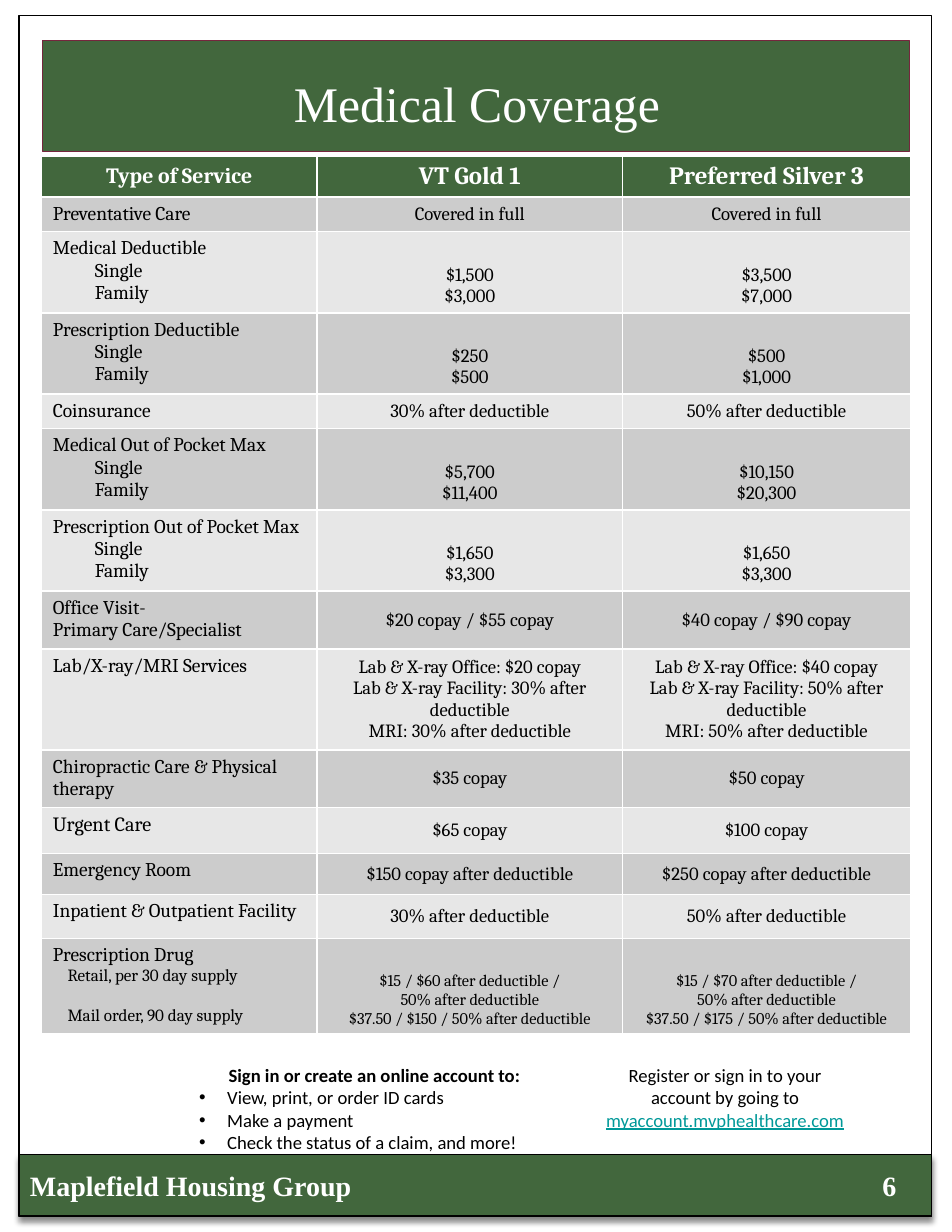
from lxml.etree import SubElement
from pptx import Presentation
from pptx.dml.color import RGBColor
from pptx.enum.shapes import MSO_SHAPE as SHAPE
from pptx.enum.text import MSO_ANCHOR as ANCHOR, PP_ALIGN as ALIGN
from pptx.oxml.ns import qn
from pptx.util import Pt

GREEN, WHITE, BLACK = "42673D", "FFFFFF", "000000"
BANDS = ("CCCCCC", "E7E7E7")
SERIF = "Times New Roman"

TITLE = "Medical Coverage"
COMPANY, PAGE = "Maplefield Housing Group", "6"
HEADERS = [("Type of Service", 14), ("VT Gold 1", 16), ("Preferred Silver 3", 16)]
COL_WIDTHS = [177, 196.5, 185]
HEADER_HEIGHT = 25
PERSONS = ["Single", "Family"]

# row height, service, indented lines, first plan, second plan
ROWS = [
    (22, ["Preventative Care"], [], ["Covered in full"], ["Covered in full"]),
    (52, ["Medical Deductible"], PERSONS, ["$1,500", "$3,000"], ["$3,500", "$7,000"]),
    (52, ["Prescription Deductible"], PERSONS, ["$250", "$500"], ["$500", "$1,000"]),
    (22, ["Coinsurance"], [], ["30% after deductible"], ["50% after deductible"]),
    (52, ["Medical Out of Pocket Max"], PERSONS, ["$5,700", "$11,400"], ["$10,150", "$20,300"]),
    (52, ["Prescription Out of Pocket Max"], PERSONS, ["$1,650", "$3,300"], ["$1,650", "$3,300"]),
    (37, ["Office Visit-", "Primary Care/Specialist"], [],
     ["$20 copay / $55 copay"], ["$40 copay / $90 copay"]),
    (64, ["Lab/X-ray/MRI Services"], [],
     ["Lab & X-ray Office: $20 copay", "Lab & X-ray Facility: 30% after deductible",
      "MRI: 30% after deductible"],
     ["Lab & X-ray Office: $40 copay", "Lab & X-ray Facility: 50% after deductible",
      "MRI: 50% after deductible"]),
    (37, ["Chiropractic Care & Physical therapy"], [], ["$35 copay"], ["$50 copay"]),
    (29.5, ["Urgent Care"], [], ["$65 copay"], ["$100 copay"]),
    (26.5, ["Emergency Room"], [],
     ["$150 copay after deductible"], ["$250 copay after deductible"]),
    (28, ["Inpatient & Outpatient Facility"], [],
     ["30% after deductible"], ["50% after deductible"]),
    (61.5, ["Prescription Drug"], ["Retail, per 30 day supply", "Mail order, 90 day supply"],
     ["$15 / $60 after deductible /", "50% after deductible",
      "$37.50 / $150 / 50% after deductible"],
     ["$15 / $70 after deductible /", "50% after deductible",
      "$37.50 / $175 / 50% after deductible"]),
]

ACCOUNT_HEADING = "Sign in or create an online account to:"
ACCOUNT_USES = ["View, print, or order ID cards", "Make a payment",
                "Check the status of a claim, and more!"]
REGISTER = ["Register or sign in to your", "account by going to "]
ADDRESS = "myaccount.mvphealthcare.com"


def rgb(color):
    return RGBColor.from_string(color)


def style(p, size, font, color=BLACK, bold=False, align=ALIGN.LEFT):
    p.alignment = align
    for r in p.runs:
        f = r.font
        f.size, f.name, f.bold = Pt(size), font, bold
        f.color.rgb = rgb(color)


def add_rect(s, box, fill, line, width):
    sp = s.shapes.add_shape(SHAPE.RECTANGLE, *map(Pt, box))
    sp.shadow.inherit = False
    if fill:
        sp.fill.solid()
        sp.fill.fore_color.rgb = rgb(fill)
    else:
        sp.fill.background()
    sp.line.color.rgb = rgb(line)
    sp.line.width = Pt(width)
    return sp


def drop_shadow(sp):
    effects = sp._element.spPr.find(qn("a:effectLst"))
    shadow = SubElement(effects, qn("a:outerShdw"), blurRad=str(Pt(4)),
                        dist=str(Pt(2.5)), dir="5400000", rotWithShape="0")
    color = SubElement(shadow, qn("a:srgbClr"), val=BLACK)
    SubElement(color, qn("a:alpha"), val="47000")


def add_text(s, box, lines):
    sp = s.shapes.add_textbox(*map(Pt, box))
    sp.text_frame.word_wrap = True
    sp.text_frame.text = "\n".join(lines)
    return sp.text_frame


def add_bullet(p):
    pPr = p._p.get_or_add_pPr()
    pPr.set("marL", str(Pt(18)))
    pPr.set("indent", str(-Pt(18)))
    SubElement(pPr, qn("a:buFont"), typeface="Arial")
    SubElement(pPr, qn("a:buChar"), char="•")


def fill_cell(cell, lines, fill, anchor):
    cell.fill.solid()
    cell.fill.fore_color.rgb = rgb(fill)
    cell.vertical_anchor = anchor
    cell.text_frame.text = "\n".join(lines)
    return cell.text_frame.paragraphs


def add_coverage_table(s):
    heights = [HEADER_HEIGHT] + [row[0] for row in ROWS]
    table = s.shapes.add_table(len(heights), len(COL_WIDTHS), Pt(26.8), Pt(100.3),
                               Pt(sum(COL_WIDTHS)), Pt(sum(heights))).table
    for column, width in zip(table.columns, COL_WIDTHS):
        column.width = Pt(width)
    for row, height in zip(table.rows, heights):
        row.height = Pt(height)

    for c, (label, size) in enumerate(HEADERS):
        for p in fill_cell(table.cell(0, c), [label], GREEN, ANCHOR.MIDDLE):
            style(p, size, "Cambria", WHITE, True, ALIGN.CENTER)

    for i, (_, service, details, *plans) in enumerate(ROWS):
        fill = BANDS[i % 2]
        is_drug = bool(details) and details is not PERSONS
        paragraphs = fill_cell(table.cell(i + 1, 0), service + details, fill, ANCHOR.TOP)
        for n, p in enumerate(paragraphs):
            is_detail = n >= len(service)
            if is_detail:
                p._p.get_or_add_pPr().set("marL", str(Pt(9.4 if is_drug else 27)))
            size = 11 if is_drug and is_detail else 13 if service == ["Urgent Care"] else 12.5
            style(p, size, "Cambria")
        if is_drug:
            paragraphs[-1].space_before = Pt(12.5)
        anchor = ANCHOR.BOTTOM if details else ANCHOR.MIDDLE
        for c, lines in enumerate(plans, 1):
            for p in fill_cell(table.cell(i + 1, c), lines, fill, anchor):
                style(p, 10.5 if is_drug else 12, "Cambria", align=ALIGN.CENTER)


def add_account_note(s):
    """Two text columns; the bottom inset leaves room for four lines in each."""
    tf = add_text(s, (121, 680.4, 465, 94.3), [ACCOUNT_HEADING, *ACCOUNT_USES, *REGISTER])
    tf.margin_bottom = Pt(26)
    tf._txBody.bodyPr.set("numCol", "2")
    heading, *rest = tf.paragraphs
    uses, register = rest[:len(ACCOUNT_USES)], rest[len(ACCOUNT_USES):]
    style(heading, 12, "Calibri", bold=True, align=ALIGN.CENTER)
    for p in uses:
        add_bullet(p)
        style(p, 12, "Calibri")
    link = register[-1].add_run()
    link.text = ADDRESS
    for p in register:
        style(p, 12, "Calibri", align=ALIGN.CENTER)
    link.font.color.rgb = rgb("009999")
    link.font.underline = True


def main():
    prs = Presentation()
    prs.slide_width, prs.slide_height = Pt(612), Pt(792)
    s = prs.slides.add_slide(prs.slide_layouts[6])

    add_rect(s, (12.2, 10.1, 586.8, 771.8), None, BLACK, 1)
    drop_shadow(add_rect(s, (12.2, 742.3, 586.8, 39.6), GREEN, BLACK, 1))
    for text, left, width in ((PAGE, 560.2, 51.8), (COMPANY, 12.2, 478)):
        tf = add_text(s, (left, 747.4, width, 28.8), [text])
        style(tf.paragraphs[0], 18, SERIF, WHITE, True)

    add_coverage_table(s)

    add_rect(s, (27.4, 25.9, 557.3, 71.3), GREEN, "75263D", 0.75)
    tf = add_text(s, (27.4, 43.5, 558.7, 42.5), [TITLE])
    style(tf.paragraphs[0], 32, SERIF, WHITE, align=ALIGN.CENTER)

    add_account_note(s)
    prs.save("out.pptx")


if __name__ == "__main__":
    main()
